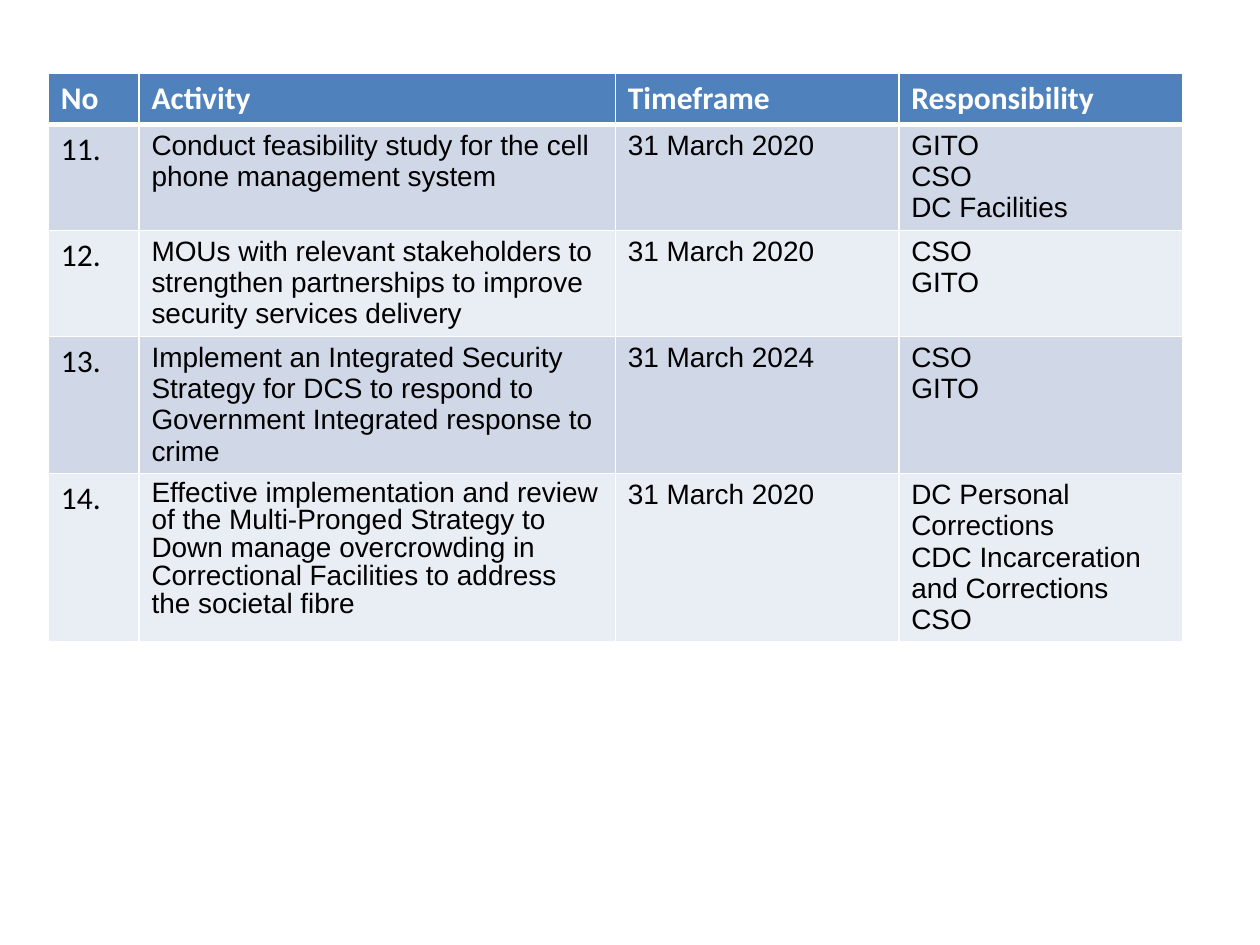
from dataclasses import dataclass

from lxml import etree
from pptx import Presentation
from pptx import util as u
from pptx.dml.color import RGBColor
from pptx.oxml.ns import qn


@dataclass(frozen=True)
class Theme:
    header_fill: str = "4F81BD"
    bands: tuple = ("D0D8E8", "E9EDF4")
    rule: str = "FFFFFF"
    light: str = "FFFFFF"
    dark: str = "000000"
    label_font: str = "Calibri"
    label_size: int = 18
    body_font: str = "Arial"
    body_size: int = 16


class SlideBuilder:
    def __init__(self, deck, theme):
        self.theme = theme
        self.slide = deck.slides.add_slide(deck.slide_layouts[6])

    def borders(self, cell, widths):
        properties = cell._tc.get_or_add_tcPr()
        for index, (side, width) in enumerate(widths.items()):
            line = etree.Element(qn(f"a:ln{side}"), w=str(u.Pt(width)))
            solid = etree.SubElement(line, qn("a:solidFill"))
            etree.SubElement(solid, qn("a:srgbClr"), val=self.theme.rule)
            properties.insert(index, line)

    def cell_text(self, cell, content, font, color, spacing):
        frame = cell.text_frame
        for index, line in enumerate(content.split("\n")):
            para = frame.add_paragraph() if index else frame.paragraphs[0]
            for name, value in spacing.items():
                setattr(para, name, value)
            span = para.add_run()
            span.text = line
            for name, value in font.items():
                setattr(span.font, name, value)
            span.font.color.rgb = RGBColor.from_string(color)

    def table(self, left, top, widths, heights, rows, spacings):
        theme = self.theme
        grid = self.slide.shapes.add_table(
            len(rows), len(widths), u.Pt(left), u.Pt(top),
            u.Pt(sum(widths)), u.Pt(sum(heights))).table
        for column, width in zip(grid.columns, widths):
            column.width = u.Pt(width)
        for r, (row, height) in enumerate(zip(rows, heights)):
            grid.rows[r].height = u.Pt(height)
            header = r == 0
            fill = theme.header_fill if header else theme.bands[(r - 1) % 2]
            color = theme.light if header else theme.dark
            edges = {"L": 1, "R": 1, "T": 3 if r == 1 else 1, "B": 3 if header else 1}
            for c, content in enumerate(row):
                label = header or c == 0
                font = {
                    "name": theme.label_font if label else theme.body_font,
                    "size": u.Pt(theme.label_size if label else theme.body_size),
                    "bold": header,
                }
                cell = grid.cell(r, c)
                cell.fill.solid()
                cell.fill.fore_color.rgb = RGBColor.from_string(fill)
                self.borders(cell, edges)
                self.cell_text(cell, content, font, color, spacings.get((r, c), {}))


ACTIVITIES = [
    ("No", "Activity", "Timeframe", "Responsibility"),
    ("11.", "Conduct feasibility study for the cell phone management system",
     "31 March 2020", "GITO\nCSO\nDC Facilities"),
    ("12.", "MOUs with relevant stakeholders to strengthen partnerships to "
     "improve security services delivery", "31 March 2020", "CSO\nGITO"),
    ("13.", "Implement an Integrated Security Strategy for DCS to respond to "
     "Government Integrated response to crime", "31 March 2024", "CSO\nGITO"),
    ("14.", "Effective implementation and review of the Multi-Pronged Strategy to "
     "Down manage overcrowding in Correctional Facilities to address the societal fibre",
     "31 March 2020",
     "DC Personal Corrections\nCDC Incarceration and Corrections\nCSO"),
]


def main():
    deck = Presentation()
    deck.slide_width, deck.slide_height = u.Pt(720), u.Pt(540)
    page = SlideBuilder(deck, Theme())
    page.table(
        left=27.6, top=41.8,
        widths=(51.8, 272.2, 162, 162),
        heights=(29.2, 60.6, 60.6, 78.3, 96),
        rows=ACTIVITIES,
        spacings={(4, 1): {"line_spacing": 0.9, "space_after": u.Pt(5.6)}})
    deck.save("out.pptx")


if __name__ == "__main__":
    main()
